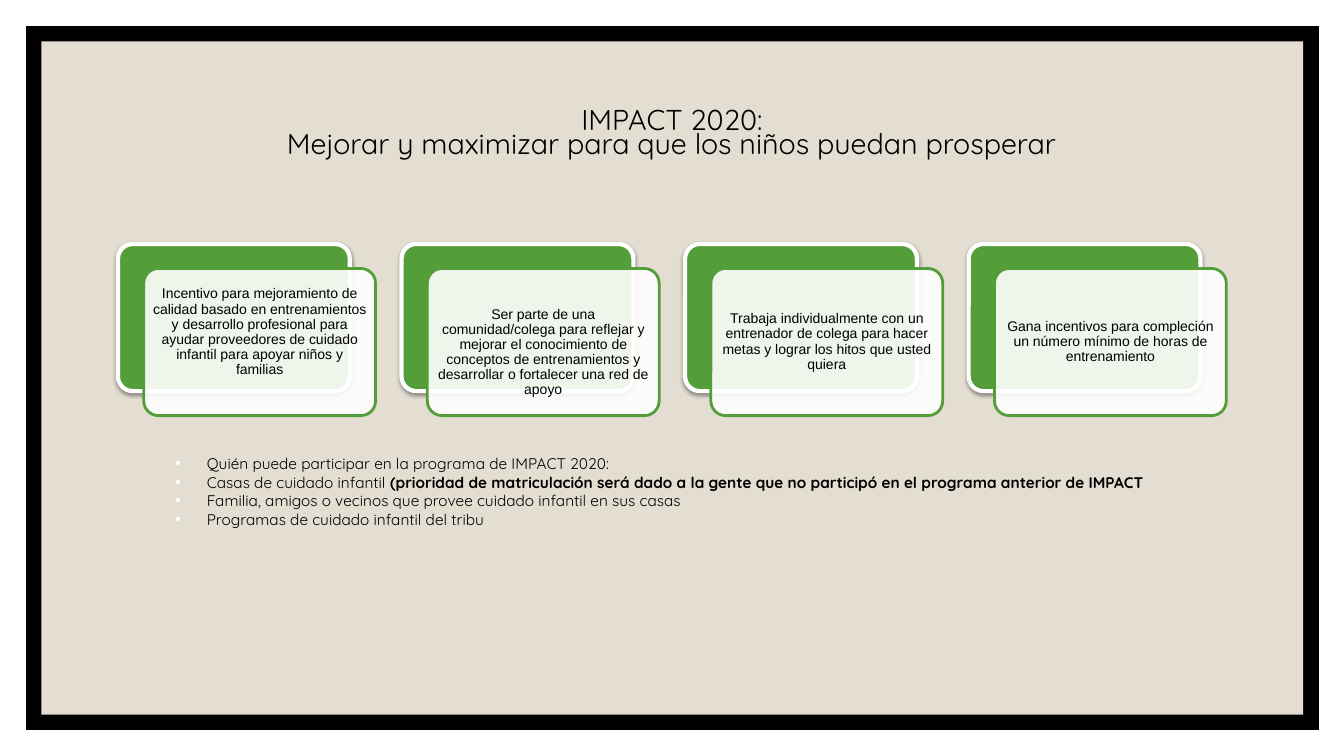
from lxml import etree
from pptx import Presentation
from pptx.dml.color import RGBColor
from pptx.enum.shapes import MSO_SHAPE
from pptx.enum.text import MSO_ANCHOR, MSO_AUTO_SIZE, PP_ALIGN
from pptx.oxml.ns import qn
from pptx.util import Pt

RECT, ROUNDED = MSO_SHAPE.RECTANGLE, MSO_SHAPE.ROUNDED_RECTANGLE
CENTER, LEFT = PP_ALIGN.CENTER, PP_ALIGN.LEFT
MIDDLE, TOP = MSO_ANCHOR.MIDDLE, MSO_ANCHOR.TOP
NO_FIT = MSO_AUTO_SIZE.NONE
BLACK, WHITE, GREEN, SAND = "000000", "FFFFFF", "549E39", "E3DED1"

deck = Presentation()
deck.slide_width, deck.slide_height = Pt(960), Pt(540)
page = deck.slides.add_slide(deck.slide_layouts[1])


def add_panel(kind, left, top, width, height, fill, line=None, weight=0):
    panel = page.shapes.add_shape(kind, Pt(left), Pt(top), Pt(width), Pt(height))
    panel.shadow.inherit = False
    panel.fill.solid()
    panel.fill.fore_color.rgb = RGBColor.from_string(fill)
    if line:
        panel.line.color.rgb = RGBColor.from_string(line)
        panel.line.width = Pt(weight)
    else:
        panel.line.fill.background()
    return panel


def write(para, text, size, font="Quicksand", bold=False, align=LEFT, spacing=1.0):
    para.alignment = align
    para.line_spacing = spacing
    para.space_before = para.space_after = Pt(0)
    span = para.add_run()
    span.text = text
    span.font.name, span.font.size, span.font.bold = font, Pt(size), bold
    span.font.color.rgb = RGBColor.from_string(BLACK)


# Title and backdrop
title, body = page.shapes.title, page.placeholders[1]
border = add_panel(RECT, 18.7, 18.7, 923, 502.6, BLACK, BLACK, 0.5)
backdrop = add_panel(RECT, 29.5, 29.5, 901.4, 481, SAND)
for panel in (border, backdrop):
    title.element.addprevious(panel.element)

title.left, title.top, title.width, title.height = Pt(84), Pt(50.4), Pt(792), Pt(112.3)
frame = title.text_frame
frame.auto_size, frame.vertical_anchor = NO_FIT, MIDDLE
frame.margin_bottom = Pt(24)
heading = ["IMPACT 2020:", "Mejorar y maximizar para que los niños puedan prosperar"]
for index, text in enumerate(heading):
    para = frame.add_paragraph() if index else frame.paragraphs[0]
    write(para, text, 20.5, align=CENTER, spacing=0.7)

# Cards: text, extra top margin, extra bottom margin
cards = [
    ("Incentivo para mejoramiento de calidad basado en entrenamientos y desarrollo "
     "profesional para ayudar proveedores de cuidado infantil para apoyar niños y "
     "familias", 0, 14),
    ("Ser parte de una comunidad/colega para reflejar y mejorar el conocimiento de "
     "conceptos de entrenamientos y desarrollar o fortalecer una red de apoyo", 15, 0),
    ("Trabaja individualmente con un entrenador de colega para hacer metas y lograr "
     "los hitos que usted quiera", 0, 0),
    ("Gana incentivos para compleción un número mínimo de horas de entrenamiento", 0, 0),
]
for index, (text, extra_top, extra_bottom) in enumerate(cards):
    left, top = 84.3 + index * 202.55, 174.3
    back = add_panel(ROUNDED, left, top, 165.6, 105.1, GREEN, WHITE, 3)
    effects = back.element.spPr.find(qn("a:effectLst"))
    shadow = etree.SubElement(effects, qn("a:outerShdw"), blurRad=str(Pt(3.1)),
                              dist=str(Pt(1.6)), dir="5400000", rotWithShape="0")
    shade = etree.SubElement(shadow, qn("a:srgbClr"), val=BLACK)
    etree.SubElement(shade, qn("a:alpha"), val="38000")

    front = add_panel(ROUNDED, left + 18.4, top + 17.5, 165.6, 105.1, WHITE, GREEN, 2)
    tint = front.element.spPr.find(qn("a:solidFill")).find(qn("a:srgbClr"))
    etree.SubElement(tint, qn("a:alpha"), val="90000")
    back.adjustments[0] = front.adjustments[0] = 0.1
    frame = front.text_frame
    frame.word_wrap, frame.vertical_anchor = True, MIDDLE
    frame.margin_left = frame.margin_right = Pt(3)
    frame.margin_top, frame.margin_bottom = Pt(3 + extra_top), Pt(3 + extra_bottom)
    write(frame.paragraphs[0], text, 10, font="Arial", align=CENTER, spacing=0.9)

# Participants
body.left, body.top, body.width, body.height = Pt(118), Pt(321), Pt(737.3), Pt(60.5)
frame = body.text_frame
frame.auto_size, frame.vertical_anchor = NO_FIT, TOP
participants = [
    ("Quién puede participar en la programa de IMPACT 2020:", ""),
    ("Casas de cuidado infantil", " (prioridad de matriculación será dado a la gente "
     "que no participó en el programa anterior de IMPACT"),
    ("Familia, amigos o vecinos que provee cuidado infantil en sus casas", ""),
    ("Programas de cuidado infantil del tribu", ""),
]
for index, (text, emphasis) in enumerate(participants):
    para = frame.add_paragraph() if index else frame.paragraphs[0]
    write(para, text, 11)
    if emphasis:
        write(para, emphasis, 11, bold=True)
    settings = para._p.get_or_add_pPr()
    settings.set("marL", str(Pt(22.5)))
    settings.set("indent", str(Pt(-22.5)))
    bullet_color = etree.SubElement(settings, qn("a:buClr"))
    etree.SubElement(bullet_color, qn("a:srgbClr"), val=WHITE)
    etree.SubElement(settings, qn("a:buFont"), typeface="Arial")
    etree.SubElement(settings, qn("a:buChar"), char="•")

deck.save("out.pptx")
